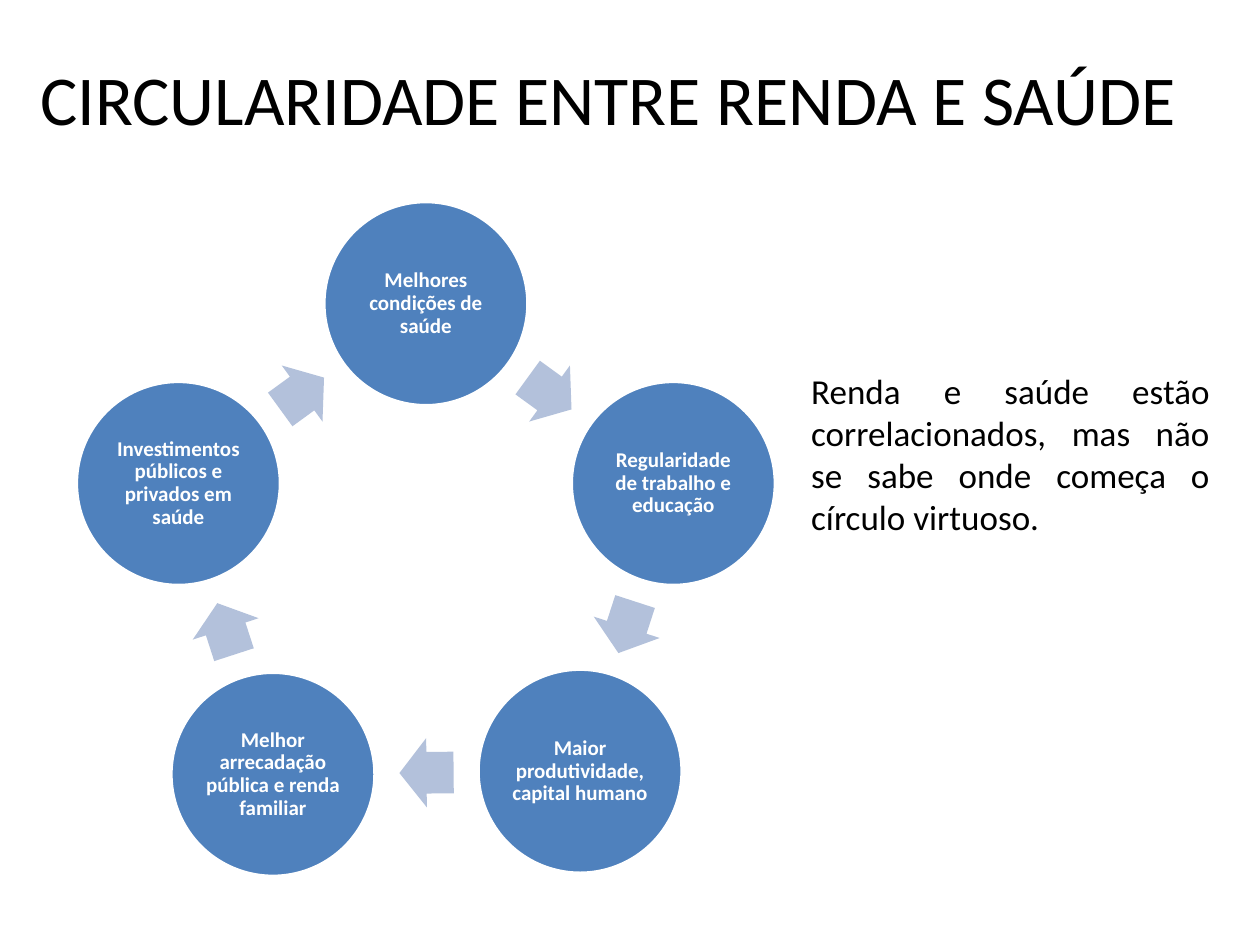
from dataclasses import dataclass
from itertools import pairwise
from math import atan2, cos, degrees, radians, sin

from pptx import Presentation
from pptx.dml.color import RGBColor
from pptx.enum.shapes import MSO_SHAPE as Preset
from pptx.enum.text import MSO_ANCHOR as Anchor, PP_ALIGN as Align
from pptx.util import Inches, Pt

COLUMNS, ROWS = 100, 75
CELL = Inches(10) // COLUMNS

RING_X, RING_Y, RING_RADIUS = 33.8, 44.75, 20.65
CIRCLE = 16.2
ARROW_LENGTH, ARROW_WIDTH = 4.3, 5.5

BLUE, PALE_BLUE, WHITE, BLACK = "4F81BD", "B3C1DB", "FFFFFF", "000000"


@dataclass
class Stage:
    label: str
    shift_x: float = 0
    shift_y: float = 0


@dataclass
class Point:
    x: float
    y: float


STAGES = [
    Stage("Melhores condições de saúde"),
    Stage("Regularidade de trabalho e educação"),
    Stage("Maior produtividade, capital humano", 0.1, -0.25),
    Stage("Melhor arrecadação pública e renda familiar"),
    Stage("Investimentos públicos e privados em saúde"),
]


def cells(*counts: float) -> list[int]:
    return [round(count * CELL) for count in counts]


def colour(hex_code: str) -> RGBColor:
    return RGBColor.from_string(hex_code)


def write(frame, text: str, size: int, hex_code: str, align: Align,
          anchor: Anchor, bold: bool = False):
    frame.word_wrap = True
    frame.vertical_anchor = anchor
    paragraph = frame.paragraphs[0]
    paragraph.alignment = align
    run = paragraph.add_run()
    run.text = text
    styles = {"name": "Calibri", "size": Pt(size), "bold": bold}
    for attribute, value in styles.items():
        setattr(run.font, attribute, value)
    run.font.color.rgb = colour(hex_code)
    return paragraph


def add_centred(slide, preset: Preset, centre: Point, width: float,
                height: float, hex_code: str):
    box = cells(centre.x - width / 2, centre.y - height / 2, width, height)
    shape = slide.shapes.add_shape(preset, *box)
    shape.shadow.inherit = False
    shape.fill.solid()
    shape.fill.fore_color.rgb = colour(hex_code)
    return shape


def stage_centre(index: int) -> Point:
    """Place a stage on the ring, clockwise from the top."""
    angle = radians(360 / len(STAGES) * index - 90)
    stage = STAGES[index]
    return Point(RING_X + RING_RADIUS * cos(angle) + stage.shift_x,
                 RING_Y + RING_RADIUS * sin(angle) + stage.shift_y)


def add_stage(slide, stage: Stage, centre: Point) -> None:
    circle = add_centred(slide, Preset.OVAL, centre, CIRCLE, CIRCLE, BLUE)
    circle.line.color.rgb = colour(WHITE)
    circle.line.width = Pt(2)
    frame = circle.text_frame
    for side in ("left", "top", "right", "bottom"):
        setattr(frame, f"margin_{side}", Inches(0.02))
    label = write(frame, stage.label, 12, WHITE, Align.CENTER, Anchor.MIDDLE, True)
    label.line_spacing = 0.9


def add_arrow(slide, start: Point, end: Point) -> None:
    middle = Point((start.x + end.x) / 2, (start.y + end.y) / 2)
    arrow = add_centred(slide, Preset.RIGHT_ARROW, middle,
                        ARROW_LENGTH, ARROW_WIDTH, PALE_BLUE)
    arrow.line.fill.background()
    arrow.adjustments[0] = 0.6
    arrow.adjustments[1] = 0.5
    arrow.rotation = degrees(atan2(end.y - start.y, end.x - start.x)) % 360


def main() -> None:
    deck = Presentation()
    deck.slide_width, deck.slide_height = COLUMNS * CELL, ROWS * CELL
    slide = deck.slides.add_slide(deck.slide_layouts[6])

    centres = [stage_centre(index) for index in range(len(STAGES))]
    for stage, (start, end) in zip(STAGES, pairwise(centres + centres[:1])):
        add_stage(slide, stage, start)
        add_arrow(slide, start, end)

    title = slide.shapes.add_textbox(*cells(2, 2.9, 92.5, 9.6))
    write(title.text_frame, "CIRCULARIDADE ENTRE RENDA E SAÚDE",
          40, BLACK, Align.CENTER, Anchor.MIDDLE)

    remark = slide.shapes.add_textbox(*cells(63.4, 28.8, 33.6, 21.3))
    write(remark.text_frame,
          "Renda e saúde estão correlacionados, mas não se sabe onde começa "
          "o círculo virtuoso.", 20, BLACK, Align.JUSTIFY, Anchor.TOP)

    deck.save("out.pptx")


if __name__ == "__main__":
    main()
